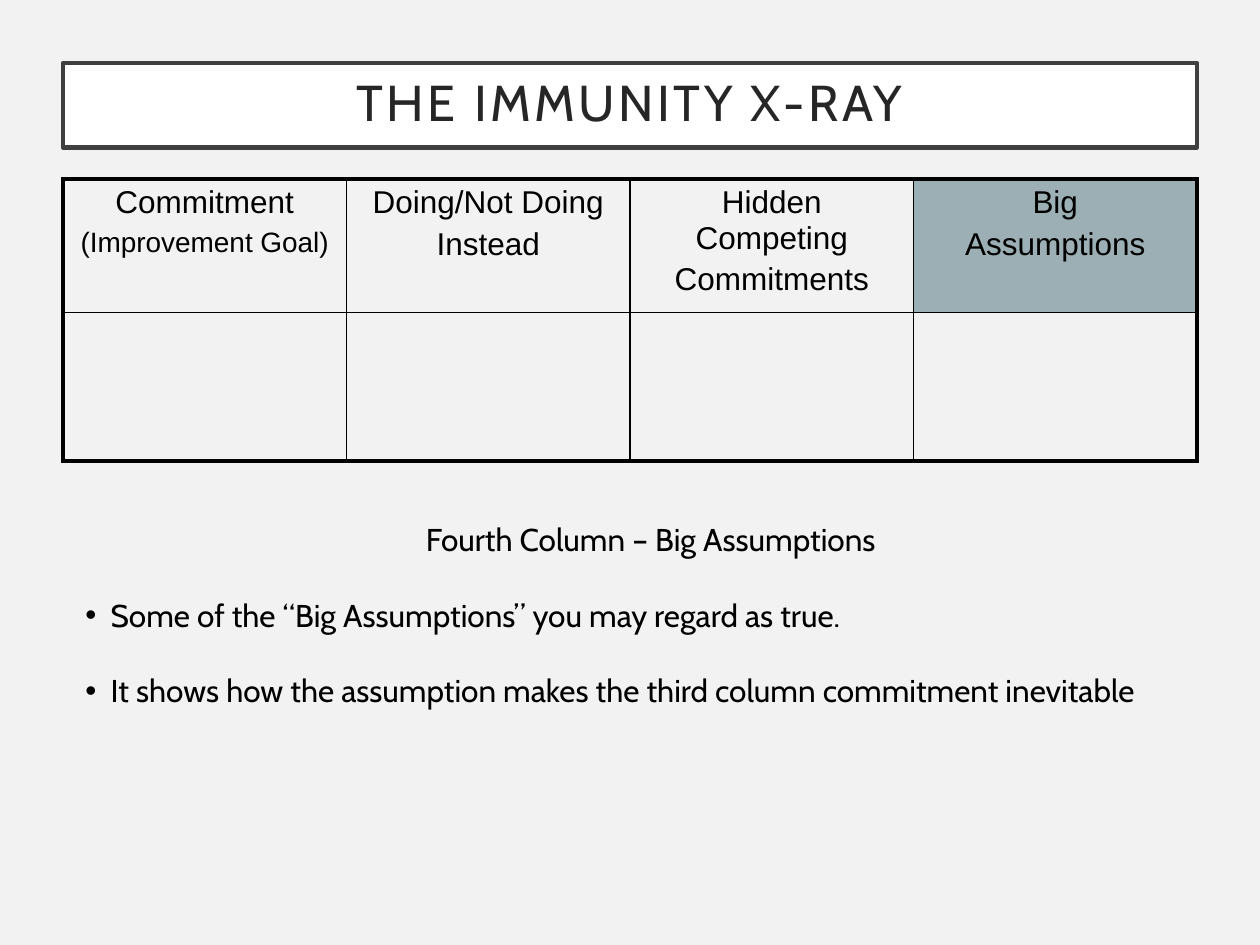
from dataclasses import dataclass

from lxml.etree import SubElement
from pptx import Presentation
from pptx.dml.color import RGBColor
from pptx.enum.shapes import MSO_SHAPE
from pptx.enum.text import MSO_ANCHOR, PP_ALIGN
from pptx.oxml import parse_xml
from pptx.oxml.ns import nsdecls, qn
from pptx.util import Inches, Pt


@dataclass(frozen=True)
class Theme:
    background: str = "F2F2F2"
    panel: str = "FFFFFF"
    frame: str = "404040"
    title: str = "262626"
    text: str = "000000"
    highlight: str = "9BAFB5"
    title_font: str = "Cabin"
    table_font: str = "Arial"
    title_size: float = 28.8
    body_size: float = 18
    small_size: float = 16
    thick: float = 2.25
    thin: float = 1


class SlideBuilder:
    def __init__(self, presentation, theme):
        self.theme = theme
        self.slide = presentation.slides.add_slide(presentation.slide_layouts[6])
        fill = self.slide.background.fill
        fill.solid()
        fill.fore_color.rgb = RGBColor.from_string(theme.background)

    def style_runs(self, paragraph, font_name, size, color):
        for run in paragraph.runs:
            run.font.name = font_name
            run.font.size = Pt(size)
            run.font.color.rgb = RGBColor.from_string(color)

    def title(self, text, left, top, width, height):
        theme = self.theme
        shape = self.slide.shapes.add_shape(
            MSO_SHAPE.RECTANGLE, Inches(left), Inches(top), Inches(width), Inches(height))
        shape.shadow.inherit = False
        shape.fill.solid()
        shape.fill.fore_color.rgb = RGBColor.from_string(theme.panel)
        shape.line.color.rgb = RGBColor.from_string(theme.frame)
        shape.line.width = Pt(2.5)
        frame = shape.text_frame
        frame.margin_left = frame.margin_right = Inches(0.2)
        frame.margin_top = frame.margin_bottom = Inches(0.2)
        frame.vertical_anchor = MSO_ANCHOR.MIDDLE
        frame.text = text
        paragraph = frame.paragraphs[0]
        paragraph.alignment = PP_ALIGN.CENTER
        paragraph.line_spacing = 0.9
        self.style_runs(paragraph, theme.title_font, theme.title_size, theme.title)
        paragraph.runs[0].font._element.set("spc", "200")

    def borders(self, cell, widths):
        properties = cell._tc.get_or_add_tcPr()
        for index, (side, width) in enumerate(zip("LRTB", widths)):
            properties.insert(index, parse_xml(
                f'<a:ln{side} {nsdecls("a")} w="{Pt(width)}"><a:solidFill>'
                f'<a:srgbClr val="{self.theme.text}"/></a:solidFill></a:ln{side}>'))

    def table(self, headings, row_heights, highlighted, left, top, width):
        theme = self.theme
        last_row, last_column = len(row_heights) - 1, len(headings) - 1
        table = self.slide.shapes.add_table(
            len(row_heights), len(headings), Inches(left), Inches(top),
            Inches(width), Inches(sum(row_heights))).table
        table.first_row = table.horz_banding = False
        for column in table.columns:
            column.width = Inches(width / len(headings))
        for row_index, height in enumerate(row_heights):
            table.rows[row_index].height = Inches(height)
            for column_index, lines in enumerate(headings):
                cell = table.cell(row_index, column_index)
                cell.fill.background()
                if row_index == 0:
                    self.heading(cell, lines)
                    if column_index == highlighted:
                        cell.fill.solid()
                        cell.fill.fore_color.rgb = RGBColor.from_string(theme.highlight)
                outer = (column_index == 0, column_index == last_column,
                         row_index == 0, row_index == last_row)
                self.borders(cell, [theme.thick if edge else theme.thin for edge in outer])

    def heading(self, cell, lines):
        theme = self.theme
        cell.text_frame.text = "\n".join(lines)
        for index, paragraph in enumerate(cell.text_frame.paragraphs):
            paragraph.alignment = PP_ALIGN.CENTER
            if index:
                paragraph.space_before = Pt(3.6)
            size = theme.small_size if paragraph.text.startswith("(") else theme.body_size
            self.style_runs(paragraph, theme.table_font, size, theme.text)

    def explanation(self, heading, points, left, top, width, height):
        theme = self.theme
        box = self.slide.shapes.add_textbox(
            Inches(left), Inches(top), Inches(width), Inches(height))
        frame = box.text_frame
        frame.word_wrap = True
        frame.text = "\n".join([heading, *points])
        for index, paragraph in enumerate(frame.paragraphs):
            if index:
                paragraph.space_before = Pt(21.6)
                self.bullet(paragraph)
            else:
                paragraph.alignment = PP_ALIGN.CENTER
            self.style_runs(paragraph, theme.title_font, theme.body_size, theme.text)

    def bullet(self, paragraph):
        properties = paragraph._p.get_or_add_pPr()
        properties.set("marL", str(Inches(0.2)))
        properties.set("indent", str(Inches(-0.2)))
        SubElement(properties, qn("a:buFont")).set("typeface", self.theme.table_font)
        SubElement(properties, qn("a:buChar")).set("char", "•")


def main():
    presentation = Presentation()
    presentation.slide_width = Inches(10)
    presentation.slide_height = Inches(7.5)
    builder = SlideBuilder(presentation, Theme())
    builder.title("THE IMMUNITY X-RAY", 0.5, 0.5, 9, 0.67)
    headings = [
        ("Commitment", "(Improvement Goal)"),
        ("Doing/Not Doing", "Instead"),
        ("Hidden Competing", "Commitments"),
        ("Big", "Assumptions"),
    ]
    builder.table(headings, (1.06, 1.18), 3, 0.5, 1.42, 9)
    points = [
        "Some of the “Big Assumptions” you may regard as true.",
        "It shows how the assumption makes the third column commitment inevitable",
    ]
    builder.explanation("Fourth Column – Big Assumptions", points, 0.58, 4.08, 9.17, 2.05)
    presentation.save("out.pptx")


if __name__ == "__main__":
    main()
